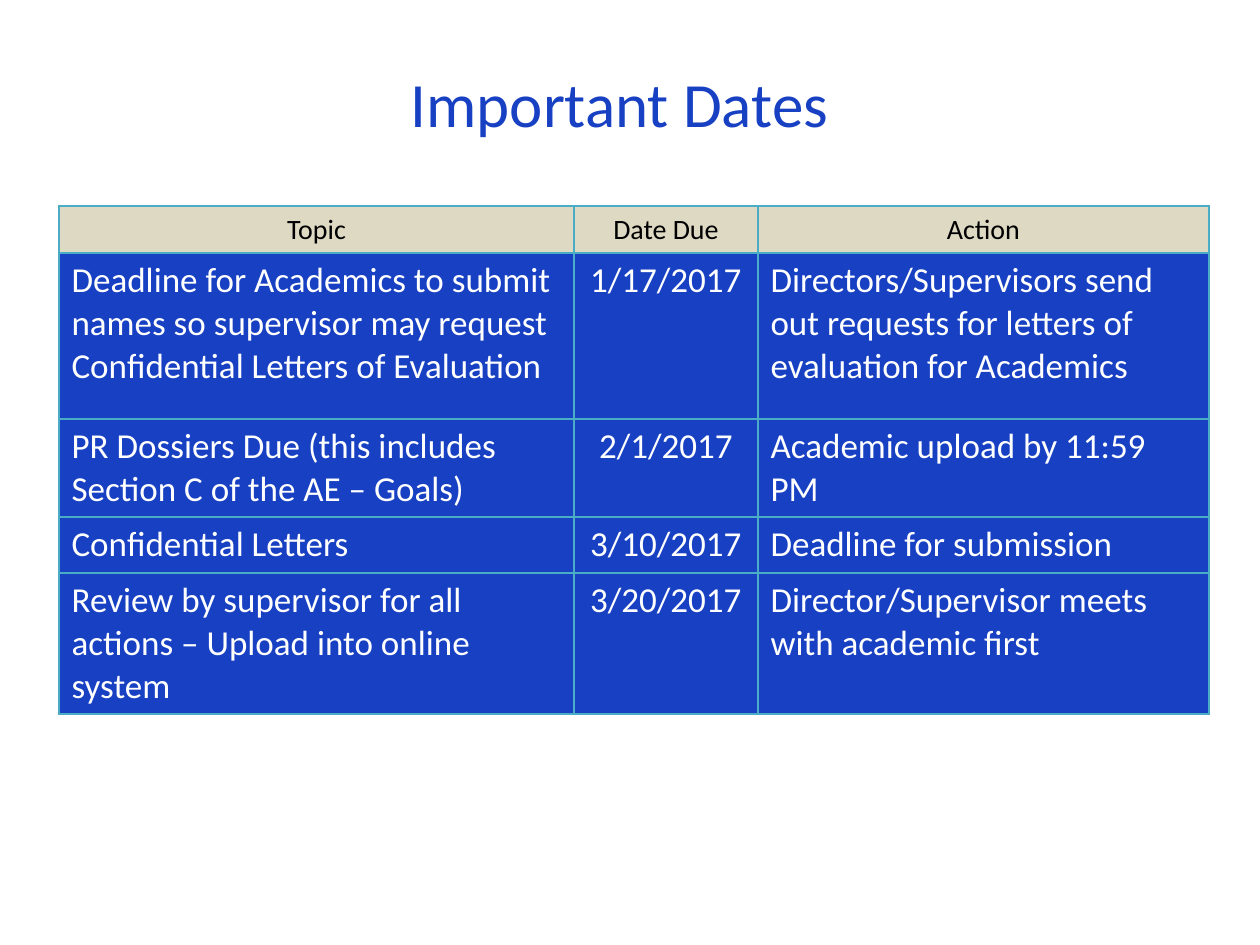
from lxml.etree import SubElement
from pptx import Presentation
from pptx.dml.color import RGBColor
from pptx.enum.text import MSO_ANCHOR, PP_ALIGN
from pptx.oxml.ns import qn
from pptx.util import Emu, Pt

PX = 914400 // 126
FONT = "Calibri"
COLORS = {
    "blue": "1740C3",
    "sand": "DDD9C3",
    "border": "4BACC6",
    "black": "000000",
    "white": "FFFFFF",
}
COL_WIDTHS = [515, 184, 451]
ROW_HEIGHTS = [47, 166, 98, 56, 141]
DATES = [
    ["Topic", "Date Due", "Action"],
    ["Deadline for Academics to submit names so supervisor may request "
     "Confidential Letters of Evaluation",
     "1/17/2017",
     "Directors/Supervisors send out requests for letters of evaluation "
     "for Academics"],
    ["PR Dossiers Due (this includes Section C of the AE – Goals)",
     "2/1/2017", "Academic upload by 11:59 PM"],
    ["Confidential Letters", "3/10/2017", "Deadline for submission"],
    ["Review by supervisor for all actions – Upload into online system",
     "3/20/2017", "Director/Supervisor meets with academic first"],
]


def px(n):
    return Emu(n * PX)


def rgb(name):
    return RGBColor.from_string(COLORS[name])


def write(tf, text, size, color, align):
    tf.text = text
    p = tf.paragraphs[0]
    p.alignment = align
    for r in p.runs:
        r.font.name = FONT
        r.font.size = Pt(size)
        r.font.color.rgb = rgb(color)


def add_title(s, text):
    tf = s.shapes.add_textbox(px(84), px(71), px(1071), px(63)).text_frame
    tf.word_wrap = True
    tf.vertical_anchor = MSO_ANCHOR.MIDDLE
    write(tf, text, 36, "blue", PP_ALIGN.CENTER)


def set_borders(cell):
    tcPr = cell._tc.get_or_add_tcPr()
    for i, side in enumerate(("lnL", "lnR", "lnT", "lnB")):
        ln = tcPr.makeelement(qn(f"a:{side}"), {"w": str(Pt(1))})
        fill = SubElement(ln, qn("a:solidFill"))
        SubElement(fill, qn("a:srgbClr"), val=COLORS["border"])
        tcPr.insert(i, ln)  # borders must precede the cell fill


def add_dates_table(s):
    table = s.shapes.add_table(
        len(DATES), len(COL_WIDTHS), px(59), px(206),
        px(sum(COL_WIDTHS)), px(sum(ROW_HEIGHTS))).table
    for col, width in zip(table.columns, COL_WIDTHS):
        col.width = px(width)
    for row, height in zip(table.rows, ROW_HEIGHTS):
        row.height = px(height)

    for i, texts in enumerate(DATES):
        header = i == 0
        size, color, fill = (16, "black", "sand") if header else (20, "white", "blue")
        for j, text in enumerate(texts):
            cell = table.cell(i, j)
            cell.fill.solid()
            cell.fill.fore_color.rgb = rgb(fill)
            set_borders(cell)
            centred = header or j == 1
            write(cell.text_frame, text, size, color,
                  PP_ALIGN.CENTER if centred else PP_ALIGN.LEFT)
            for r in cell.text_frame.paragraphs[0].runs:
                r.font.bold = False


def main():
    prs = Presentation()
    prs.slide_width, prs.slide_height = px(1260), px(945)
    s = prs.slides.add_slide(prs.slide_layouts[6])

    # Heading
    add_title(s, "Important Dates")

    # Schedule of deadlines
    add_dates_table(s)

    prs.save("out.pptx")


if __name__ == "__main__":
    main()
